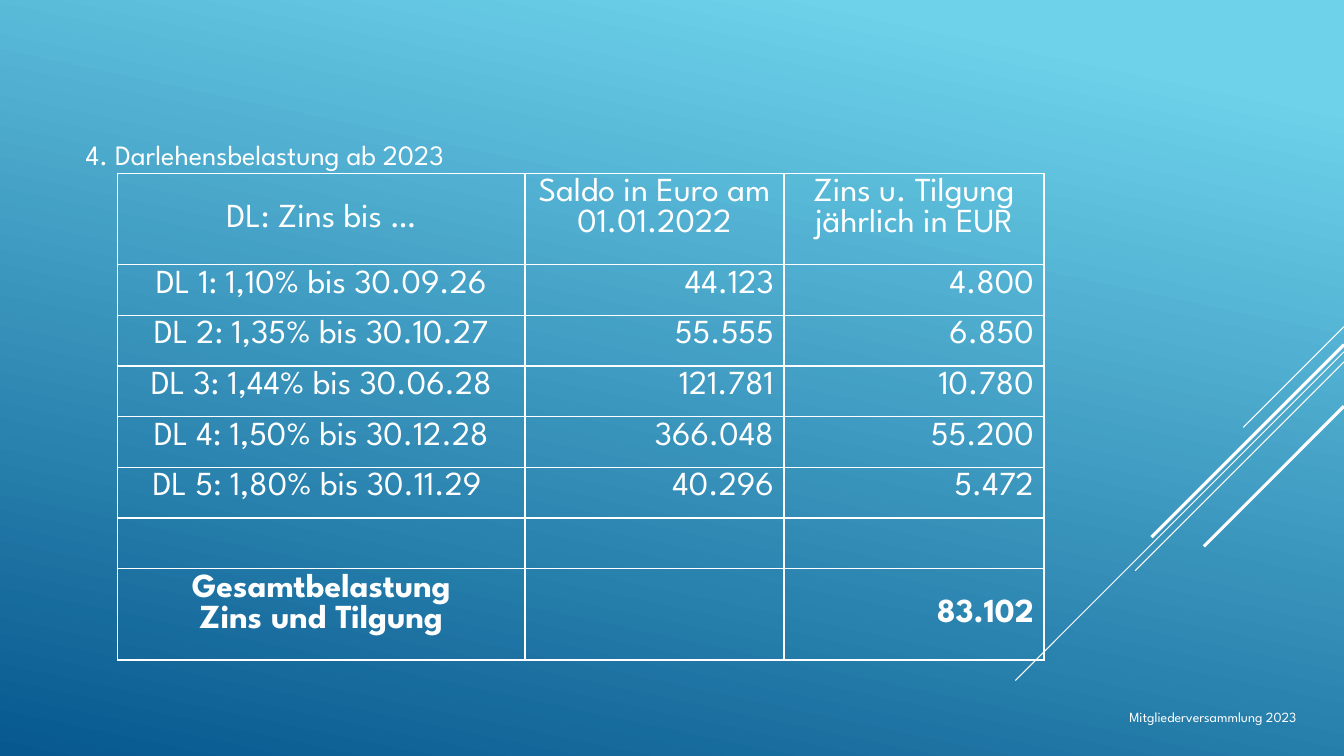
import pptx
import pptx.dml.color
import pptx.enum.shapes
import pptx.enum.text
import pptx.oxml
import pptx.oxml.ns
import pptx.util

Pt = pptx.util.Pt
RGBColor = pptx.dml.color.RGBColor
ALIGN = pptx.enum.text.PP_ALIGN
ANCHOR = pptx.enum.text.MSO_ANCHOR

WHITE = RGBColor(0xFF, 0xFF, 0xFF)
SKY = RGBColor(0x6E, 0xD2, 0xEB)
OCEAN = RGBColor(0x06, 0x58, 0x8E)
FONT = "League Spartan"

STRIPES = [(0, 72, 0.75), (18, 234.7, 0.75), (25.2, 149.2, 0.75), (12.9, 137.5, 2.25), (56.9, 100.1, 2.25)]

COLUMN_WIDTHS = [291, 185, 185.7]
TALL_ROW = 65.25
LOAN_ROW = 36.2
LOANS = [
    ("DL: Zins bis …", "Saldo in Euro am 01.01.2022", "Zins u. Tilgung jährlich in EUR"),
    ("DL 1: 1,10% bis 30.09.26", "44.123", "4.800"),
    ("DL 2: 1,35% bis 30.10.27", "55.555", "6.850"),
    ("DL 3: 1,44% bis 30.06.28", "121.781", "10.780"),
    ("DL 4: 1,50% bis 30.12.28", "366.048", "55.200"),
    ("DL 5: 1,80% bis 30.11.29 ", "40.296", "5.472"),
    ("", "", ""),
    ("Gesamtbelastung\nZins und Tilgung", "", "83.102"),
]


def add_element(parent, xml):
    element = pptx.oxml.parse_xml(xml.replace(">", f" {pptx.oxml.ns.nsdecls('a')}>", 1))
    parent.append(element)


def format_text(text_frame, size, alignment, bold=False):
    for paragraph in text_frame.paragraphs:
        paragraph.alignment = alignment
        for run in paragraph.runs:
            run.font.name = FONT
            run.font.size = Pt(size)
            run.font.bold = bold
            run.font.color.rgb = WHITE


def paint_background(slide):
    fill = slide.background.fill
    fill.gradient()
    fill.gradient_angle = 258
    for stop, color, position in zip(fill.gradient_stops, (SKY, OCEAN), (0.1, 1)):
        stop.color.rgb = color
        stop.position = position


def add_stripes(slide, right, top):
    for offset, reach, width in STRIPES:
        start = top + offset
        stripe = slide.shapes.add_connector(
            pptx.enum.shapes.MSO_CONNECTOR.STRAIGHT,
            Pt(right), Pt(start), Pt(right - reach), Pt(start + reach),
        )
        stripe.line.color.rgb = WHITE
        stripe.line.width = Pt(width)
        add_element(stripe.element.spPr, "<a:effectLst></a:effectLst>")


def add_heading(slide, left, top, width, height):
    title, body = slide.placeholders
    title.element.getparent().remove(title.element)
    body.left, body.top, body.width, body.height = Pt(left), Pt(top), Pt(width), Pt(height)
    text_frame = body.text_frame
    text_frame.text = "4. Darlehensbelastung ab 2023"
    text_frame.auto_size = pptx.enum.text.MSO_AUTO_SIZE.NONE
    text_frame.vertical_anchor = ANCHOR.TOP
    text_frame.margin_top = Pt(9)
    paragraph = text_frame.paragraphs[0]
    properties = paragraph._p.get_or_add_pPr()
    properties.set("marL", "0")
    properties.set("indent", "0")
    add_element(properties, "<a:buNone></a:buNone>")
    paragraph.space_before = Pt(0)
    format_text(text_frame, 20, ALIGN.LEFT)


def add_borders(cell):
    properties = cell._tc.get_or_add_tcPr()
    for side in ("lnL", "lnR", "lnT", "lnB"):
        add_element(
            properties,
            f'<a:{side} w="{Pt(1)}"><a:solidFill><a:srgbClr val="{WHITE}"/></a:solidFill></a:{side}>',
        )


def add_loan_table(slide, left, top):
    heights = [TALL_ROW] + [LOAN_ROW] * (len(LOANS) - 2) + [TALL_ROW]
    frame = slide.shapes.add_table(
        len(LOANS), len(COLUMN_WIDTHS), Pt(left), Pt(top), Pt(sum(COLUMN_WIDTHS)), Pt(sum(heights))
    )
    table = frame.table
    table.first_row = False
    table.horz_banding = False
    for column, width in zip(table.columns, COLUMN_WIDTHS):
        column.width = Pt(width)
    last = len(LOANS) - 1
    for row_index, (values, height) in enumerate(zip(LOANS, heights)):
        table.rows[row_index].height = Pt(height)
        for column_index, value in enumerate(values):
            cell = table.cell(row_index, column_index)
            add_borders(cell)
            cell.fill.background()
            cell.text_frame.text = value
            centered = row_index == 0 or column_index == 0
            alignment = ALIGN.CENTER if centered else ALIGN.RIGHT
            format_text(cell.text_frame, 24, alignment, row_index == last)
    for row_index, column_index in ((0, 0), (last, 2)):
        table.cell(row_index, column_index).vertical_anchor = ANCHOR.MIDDLE


def add_footer(slide, left, top, width, height):
    footer = slide.shapes.add_textbox(Pt(left), Pt(top), Pt(width), Pt(height))
    text_frame = footer.text_frame
    text_frame.word_wrap = True
    text_frame.margin_top = Pt(6)
    text_frame.text = "Mitgliederversammlung 2023"
    format_text(text_frame, 10, ALIGN.RIGHT)


def main():
    presentation = pptx.Presentation()
    presentation.slide_width = Pt(960)
    presentation.slide_height = Pt(540)
    slide = presentation.slides.add_slide(presentation.slide_layouts[1])
    paint_background(slide)
    add_stripes(slide, 960, 233.3)
    add_heading(slide, 54, 89.3, 743, 396.7)
    add_loan_table(slide, 84, 123.8)
    add_footer(slide, 339, 500.4, 594, 28.8)
    presentation.save("out.pptx")


if __name__ == "__main__":
    main()
